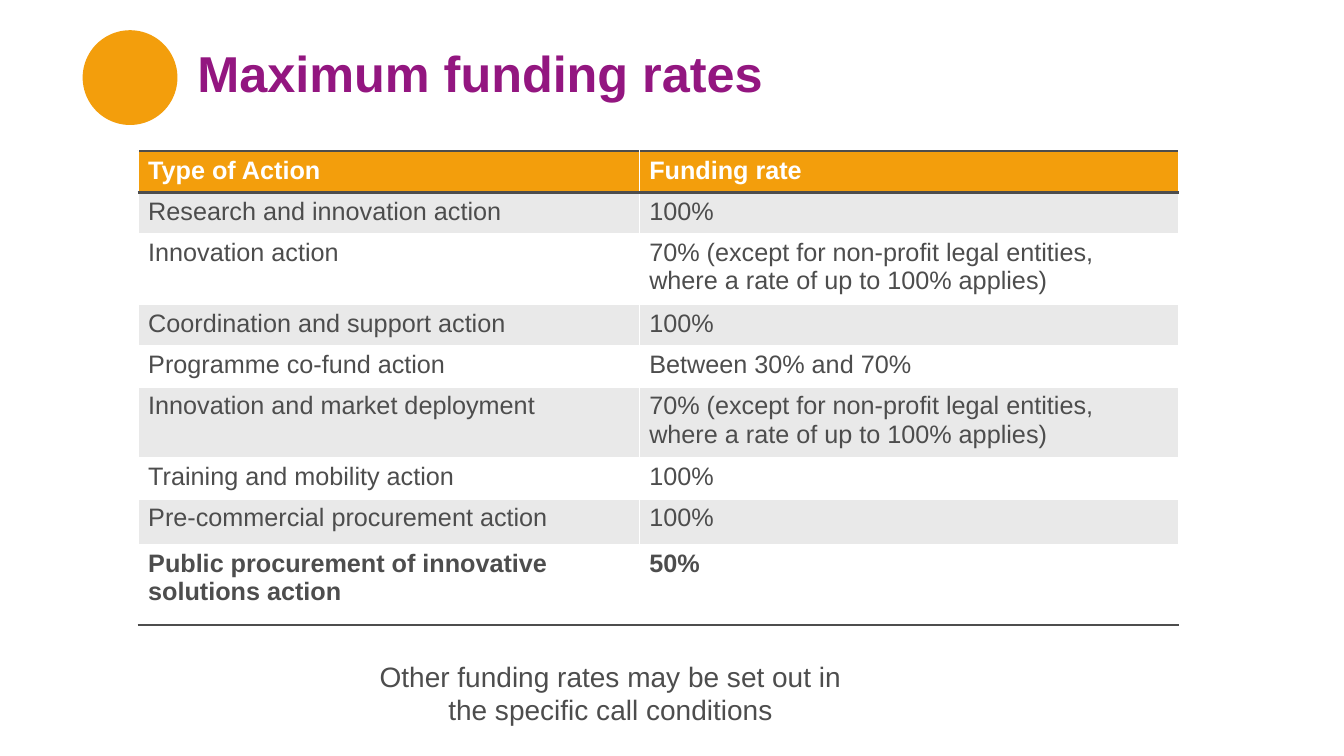
from lxml import etree
from pptx import Presentation
from pptx.dml.color import RGBColor
from pptx.enum.shapes import MSO_SHAPE
from pptx.enum.text import MSO_ANCHOR, PP_ALIGN
from pptx.oxml.ns import qn
from pptx.util import Inches, Pt

OVAL = MSO_SHAPE.OVAL
BOTTOM = MSO_ANCHOR.BOTTOM
CENTER = PP_ALIGN.CENTER
FONT = "Arial"
COLORS = {"plum": "931680", "gold": "F39E0C", "ink": "4D4D4D",
          "band": "E9E9E9", "white": "FFFFFF"}
WIDTH, HEIGHT = 13.33, 7.5
SPLIT = "70% (except for non-profit legal entities, where a rate of up to 100% applies)"
RATES = [
    ("Type of Action", "Funding rate"),
    ("Research and innovation action", "100%"),
    ("Innovation action", SPLIT),
    ("Coordination and support action", "100%"),
    ("Programme co-fund action", "Between 30% and 70%"),
    ("Innovation and market deployment", SPLIT),
    ("Training and mobility action", "100%"),
    ("Pre-commercial procurement action", "100%"),
    ("Public procurement of innovative solutions action", "50%"),
]
COLS = [4.97, 5.35]
ROWS = [0.41] * 7 + [0.45, 0.8]


def tint(name):
    """Return the named colour."""
    return RGBColor.from_string(COLORS[name])


def write(para, text, size, color, bold=False):
    """Add one styled run to a paragraph."""
    run = para.add_run()
    run.text = text
    font = run.font
    font.name, font.size, font.bold = FONT, Pt(size), bold
    font.color.rgb = tint(color)


def add_box(slide, box):
    """Add a wrapping text box and return its frame."""
    frame = slide.shapes.add_textbox(*map(Inches, box)).text_frame
    frame.word_wrap = True
    return frame


def rule(cell, side):
    """Draw a dark border on one side of a cell, ahead of its fill."""
    props = cell._tc.get_or_add_tcPr()
    line = etree.Element(qn("a:" + side), w=str(Pt(2)))
    fill = etree.SubElement(line, qn("a:solidFill"))
    etree.SubElement(fill, qn("a:srgbClr"), val=COLORS["ink"])
    props.insert(len(props) - 1, line)


def add_head(slide, box):
    """Place the gold disc and the title beside it."""
    left, top, width, height = box
    disc = slide.shapes.add_shape(
        OVAL, *map(Inches, (left, top, height, height)))
    disc.shadow.inherit = False
    disc.fill.solid()
    disc.fill.fore_color.rgb = tint("gold")
    disc.line.fill.background()
    inset = height + 0.1
    frame = add_box(slide, (left + inset, top + 0.21, width - inset, 0.52))
    frame.vertical_anchor = BOTTOM
    frame.margin_bottom = 0
    para = frame.paragraphs[0]
    para.line_spacing = 0.9
    write(para, "Maximum funding rates", 36, "plum", True)


def add_rates(slide, box):
    """Place the table of funding rates."""
    table = slide.shapes.add_table(
        len(ROWS), len(COLS), *map(Inches, box)).table
    for col, width in zip(table.columns, COLS):
        col.width = Inches(width)
    last = len(RATES) - 1
    for i, (texts, height) in enumerate(zip(RATES, ROWS)):
        table.rows[i].height = Inches(height)
        back = "gold" if i == 0 else "band" if i % 2 else "white"
        for j, text in enumerate(texts):
            cell = table.cell(i, j)
            cell.fill.solid()
            cell.fill.fore_color.rgb = tint(back)
            write(cell.text_frame.paragraphs[0], text, 18,
                  "ink" if i else "white", i in (0, last))
            if i == 0:
                rule(cell, "lnT")
            if i in (0, last):
                rule(cell, "lnB")


def add_note(slide, box):
    """Place the centred note below the table."""
    para = add_box(slide, box).paragraphs[0]
    para.alignment = CENTER
    para.line_spacing = Pt(24)
    write(para, "Other funding rates may be set out in "
          "the specific call conditions", 20, "ink")


def main():
    """Build and save the slide."""
    deck = Presentation()
    deck.slide_width, deck.slide_height = Inches(WIDTH), Inches(HEIGHT)
    slide = deck.slides.add_slide(deck.slide_layouts[6])
    add_head(slide, (0.82, 0.3, 11.6, 0.94))
    add_rates(slide, (1.37, 1.5, sum(COLS), sum(ROWS)))
    add_note(slide, (3.45, 6.49, 5.21, 0.77))
    deck.save("out.pptx")


if __name__ == "__main__":
    main()
